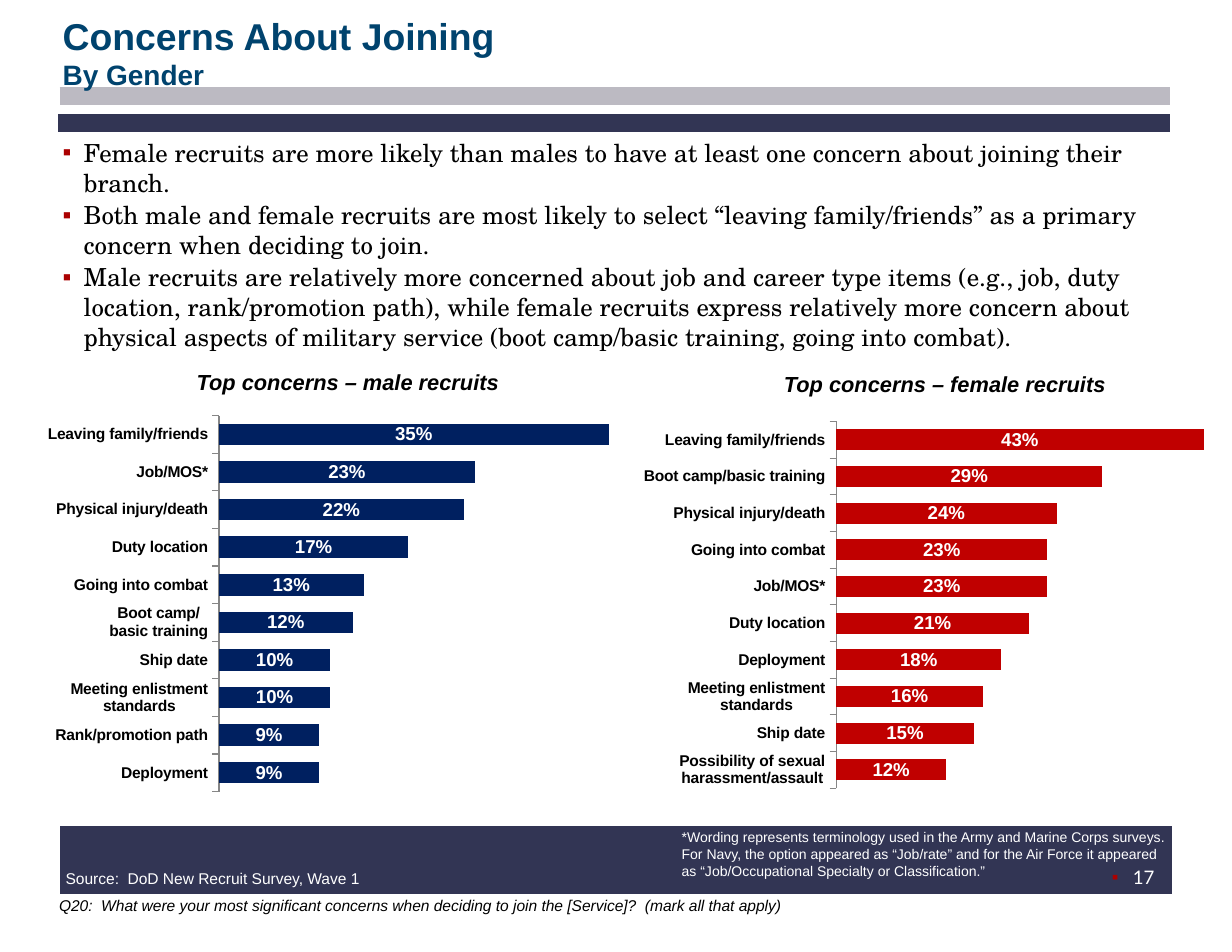
from lxml import etree
from pptx import Presentation
from pptx import util as u
from pptx.chart import data as chart_data
from pptx.dml import color
from pptx.enum import chart as charts, shapes, text
from pptx.oxml import parse_xml
from pptx.oxml import ns

COLOURS = {
    "navy": "323554", "grey": "BCBAC2", "title": "00436E", "bullet": "AB0101",
    "male": "002060", "female": "C00000", "axis": "868686",
    "black": "000000", "white": "FFFFFF",
}
CENTER = text.PP_ALIGN.CENTER
MIDDLE = text.MSO_ANCHOR.MIDDLE


def rgb(name):
    return color.RGBColor.from_string(COLOURS[name])


class SlideBuilder:
    font = "Arial"

    def __init__(self, presentation):
        self.slide = presentation.slides.add_slide(presentation.slide_layouts[6])

    def style(self, font, size, colour, bold=False, italic=False, name=None):
        font.name = name or self.font
        font.size = u.Pt(size)
        font.bold = bold
        font.italic = italic
        font.color.rgb = rgb(colour)

    def band(self, left, right, middle, colour, width):
        line = self.slide.shapes.add_connector(
            shapes.MSO_CONNECTOR.STRAIGHT,
            u.Cm(left), u.Cm(middle), u.Cm(right), u.Cm(middle))
        line.line.color.rgb = rgb(colour)
        line.line.width = u.Pt(width)
        etree.SubElement(line._element.spPr, ns.qn("a:effectLst"))

    def text(self, box, lines, size, colour="black", insets=(0.25, 0.13),
             align=None, anchor=text.MSO_ANCHOR.TOP, indent=(0, 0),
             bullet=None, space=0, **font):
        shape = self.slide.shapes.add_textbox(*(u.Cm(length) for length in box))
        frame = shape.text_frame
        frame.word_wrap = True
        frame.vertical_anchor = anchor
        frame.margin_left = frame.margin_right = u.Cm(insets[0])
        frame.margin_top = frame.margin_bottom = u.Cm(insets[1])
        frame.text = "\n".join(lines)
        for number, paragraph in enumerate(frame.paragraphs):
            paragraph.alignment = align
            if number and space:
                paragraph.space_before = u.Pt(space)
            properties = paragraph._p.get_or_add_pPr()
            properties.set("marL", str(u.Cm(indent[0])))
            properties.set("indent", str(u.Cm(indent[1])))
            if bullet:
                bullet_colour = etree.SubElement(properties, ns.qn("a:buClr"))
                etree.SubElement(bullet_colour, ns.qn("a:srgbClr"), val=COLOURS["bullet"])
                etree.SubElement(properties, ns.qn("a:buFont"), typeface=self.font)
                etree.SubElement(properties, ns.qn("a:buChar"), char=bullet)
            for run in paragraph.runs:
                self.style(run.font, size, colour, **font)
        return frame

    def bar_chart(self, box, layout, values, colour):
        data = chart_data.CategoryChartData(number_format="0%")
        data.categories = list(values)
        data.add_series("Series 1", [percent / 100 for percent in values.values()])
        chart = self.slide.shapes.add_chart(
            charts.XL_CHART_TYPE.BAR_STACKED,
            *(u.Cm(length) for length in box), data).chart
        chart.has_legend = False
        chart.has_title = False
        self.style(chart.font, 10, "black")

        category_axis = chart.category_axis
        category_axis.major_tick_mark = charts.XL_TICK_MARK.OUTSIDE
        category_axis.format.line.color.rgb = rgb("axis")
        self.style(category_axis.tick_labels.font, 10, "black", bold=True)

        value_axis = chart.value_axis
        value_axis.minimum_scale = 0
        value_axis.maximum_scale = 0.4
        value_axis.major_unit = 0.2
        value_axis.has_major_gridlines = False
        value_axis.visible = False

        plot = chart.plots[0]
        plot.gap_width = 75
        plot.overlap = 100
        plot.vary_by_categories = False
        fill = plot.series[0].format.fill
        fill.solid()
        fill.fore_color.rgb = rgb(colour)
        plot.has_data_labels = True
        labels = plot.data_labels
        labels.show_value = True
        labels.number_format = "0%"
        labels.number_format_is_linked = False
        labels.position = charts.XL_LABEL_POSITION.CENTER
        self.style(labels.font, 12, "white", bold=True)
        self.place_plot(chart, layout)

    def place_plot(self, chart, layout):
        area = chart._chartSpace.chart.plotArea
        for old in area.findall(ns.qn("c:layout")):
            area.remove(old)
        modes = "".join(f'<c:{axis}Mode val="edge"/>' for axis in "xy")
        sizes = "".join(f'<c:{key} val="{size}"/>' for key, size in zip("xywh", layout))
        area.insert(0, parse_xml(
            f'<c:layout {ns.nsdecls("c")}><c:manualLayout><c:layoutTarget val="inner"/>'
            f'{modes}{sizes}</c:manualLayout></c:layout>'))


MALE_CONCERNS = {
    "Deployment": 9, "Rank/promotion path": 9, "Meeting enlistment standards": 10,
    "Ship date": 10, "Boot camp/\nbasic training": 12, "Going into combat": 13,
    "Duty location": 17, "Physical injury/death": 22, "Job/MOS*": 23,
    "Leaving family/friends": 35,
}
FEMALE_CONCERNS = {
    "Possibility of sexual harassment/assault": 12, "Ship date": 15,
    "Meeting enlistment standards": 16, "Deployment": 18, "Duty location": 21,
    "Job/MOS*": 23, "Going into combat": 23, "Physical injury/death": 24,
    "Boot camp/basic training": 29, "Leaving family/friends": 43,
}
FINDINGS = [
    "Female recruits are more likely than males to have at least one concern about "
    "joining their branch.",
    "Both male and female recruits are most likely to select “leaving family/friends” "
    "as a primary concern when deciding to join.",
    "Male recruits are relatively more concerned about job and career type items "
    "(e.g., job, duty location, rank/promotion path), while female recruits express "
    "relatively more concern about physical aspects of military service (boot "
    "camp/basic training, going into combat).",
]
NOTE = ("*Wording represents terminology used in the Army and Marine Corps surveys. "
        "For Navy, the option appeared as “Job/rate” and for the Air Force it appeared "
        "as “Job/Occupational Specialty or Classification.”")
QUESTION = ("Q20:  What were your most significant concerns when deciding to join "
            "the [Service]?  (mark all that apply)")


def main():
    presentation = Presentation()
    presentation.slide_width = u.Cm(27.94)
    presentation.slide_height = u.Cm(21.59)
    builder = SlideBuilder(presentation)

    builder.band(1.35, 26.54, 2.18, "grey", 12)
    builder.band(1.37, 26.57, 19.51, "navy", 44)
    builder.band(1.32, 26.54, 2.79, "navy", 12)

    builder.bar_chart((14.38, 8.81, 13.89, 9.35), (0.33, 0.08, 0.6, 0.89),
                      FEMALE_CONCERNS, "female")
    builder.bar_chart((0.46, 8.84, 15.54, 9.8), (0.29, 0.06, 0.65, 0.87),
                      MALE_CONCERNS, "male")
    for left, top, group in ((3, 8.23, "male"), (16.54, 8.28, "female")):
        builder.text((left, top, 9.78, 0.86), [f"Top concerns – {group} recruits"],
                     14, align=CENTER, bold=True, italic=True)

    title = builder.text((1.27, 0.46, 25.53, 1.45), ["Concerns About Joining", "By Gender"],
                         24, "title", insets=(0.15, 0.15), anchor=MIDDLE, bold=True)
    title.paragraphs[1].runs[0].font.size = u.Pt(18)
    builder.text((1.27, 2.97, 25.27, 3.61), FINDINGS, 16, insets=(0.15, 0.15),
                 indent=(0.48, -0.48), bullet="▪", space=1.6, name="TeX Gyre Schola")

    builder.text((24.38, 19.51, 2.97, 1.47), ["17"], 12, "white", align=CENTER,
                 indent=(0, -0.48), bullet="▪", name="Lato")
    builder.text((1.24, 19.58, 13.97, 0.69), ["Source:  DoD New Recruit Survey, Wave 1"],
                 10, "white")
    builder.text((15.21, 18.8, 11.58, 0.51), [NOTE], 9, "white", insets=(0.25, 0))
    builder.text((0.61, 20.19, 25.93, 0.69), [QUESTION], 10, indent=(0.48, 0), italic=True)

    presentation.save("out.pptx")


if __name__ == "__main__":
    main()
